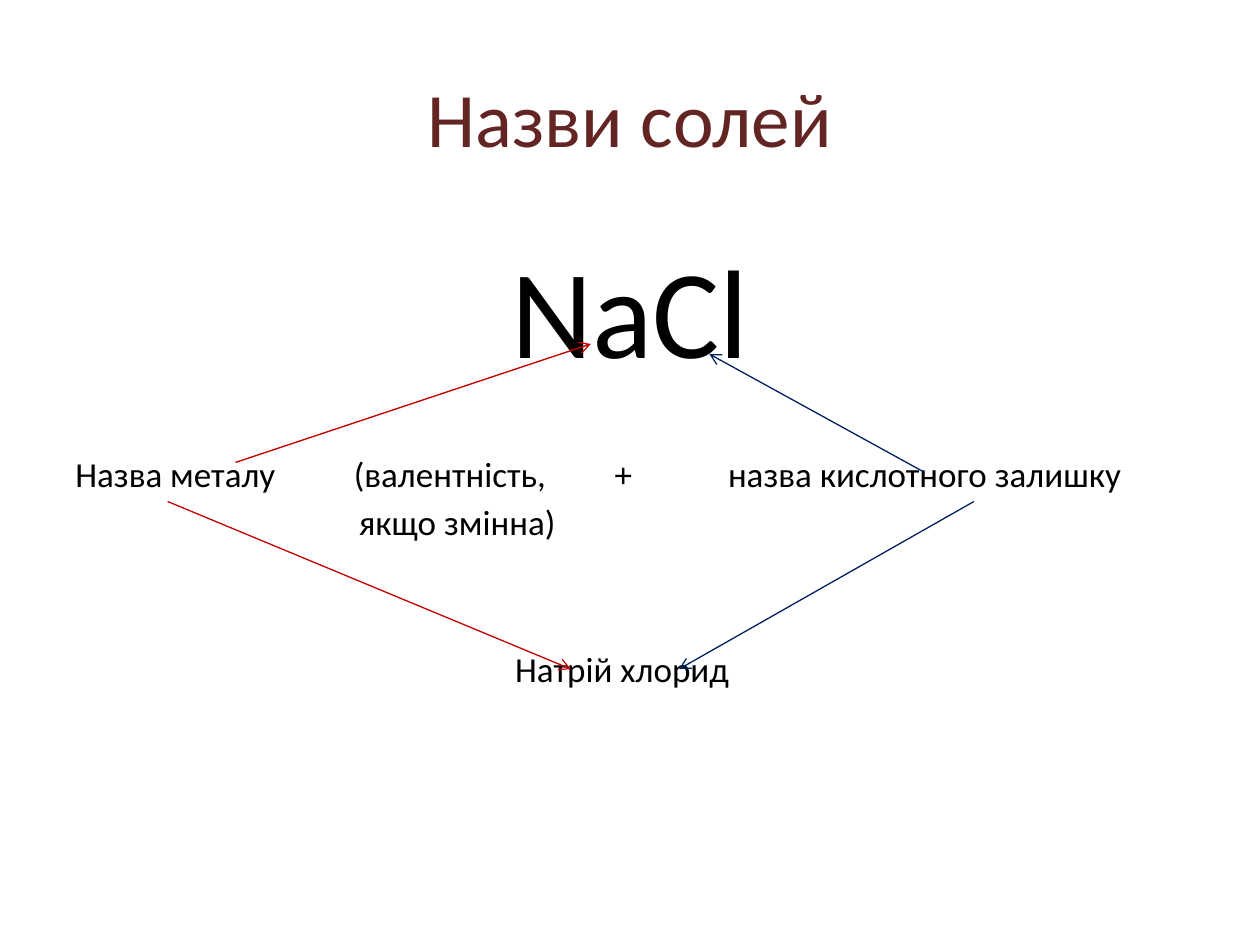
from dataclasses import dataclass

from pptx import Presentation
from pptx.dml.color import RGBColor
from pptx.enum.shapes import MSO_CONNECTOR
from pptx.enum.text import MSO_ANCHOR, PP_ALIGN
from pptx.oxml.ns import qn
from pptx.util import Inches, Pt
from lxml.etree import SubElement


@dataclass(frozen=True)
class Theme:
    font: str = "Calibri"
    title_color: str = "632523"
    text_color: str = "000000"
    metal_color: str = "C00000"
    residue_color: str = "002060"
    title_size: float = 44
    formula_size: float = 72
    text_size: float = 20
    line_width: float = 0.75
    line_gap: float = 3.6


class SaltSlide:
    def __init__(self, slide, theme):
        self.slide = slide
        self.theme = theme

    def format_runs(self, paragraph, size, color):
        for run in paragraph.runs:
            run.font.name = self.theme.font
            run.font.size = Pt(size)
            run.font.color.rgb = RGBColor.from_string(color)

    def title(self, wording, left, top, width, height):
        heading = self.slide.shapes.title
        heading.left, heading.top = Inches(left), Inches(top)
        heading.width, heading.height = Inches(width), Inches(height)
        frame = heading.text_frame
        frame.text = wording
        frame.vertical_anchor = MSO_ANCHOR.MIDDLE
        frame.paragraphs[0].alignment = PP_ALIGN.CENTER
        self.format_runs(frame.paragraphs[0], self.theme.title_size, self.theme.title_color)

    def body(self, left, top, width, height):
        box = self.slide.shapes.add_textbox(
            Inches(left), Inches(top), Inches(width), Inches(height)
        )
        box.text_frame.word_wrap = True
        return box.text_frame

    def formula(self, frame, wording):
        paragraph = frame.paragraphs[0]
        paragraph.text = wording
        paragraph.alignment = PP_ALIGN.CENTER
        self.format_runs(paragraph, self.theme.formula_size, self.theme.text_color)

    def tabbed_line(self, frame, wording, stops, space_before):
        paragraph = frame.add_paragraph()
        paragraph.text = wording
        tabs = SubElement(paragraph._p.get_or_add_pPr(), qn("a:tabLst"))
        for stop in stops:
            SubElement(tabs, qn("a:tab"), pos=str(Inches(stop)), algn="l")
        paragraph.alignment = PP_ALIGN.LEFT
        paragraph.space_before = Pt(space_before)
        self.format_runs(paragraph, self.theme.text_size, self.theme.text_color)

    def arrow(self, start, end, color):
        connector = self.slide.shapes.add_connector(
            MSO_CONNECTOR.STRAIGHT, *(Inches(value) for value in (*start, *end))
        )
        connector.line.color.rgb = RGBColor.from_string(color)
        connector.line.width = Pt(self.theme.line_width)
        SubElement(connector.line._get_or_add_ln(), qn("a:tailEnd"), type="arrow")
        SubElement(connector._element.spPr, qn("a:effectLst"))


def main():
    presentation = Presentation()
    presentation.slide_width = Inches(10)
    presentation.slide_height = Inches(7.5)
    theme = Theme()
    salts = SaltSlide(presentation.slides.add_slide(presentation.slide_layouts[5]), theme)

    salts.title("Назви солей", 0.5, 0.3, 9, 1.25)

    naming = salts.body(0.5, 1.8, 9, 4.9)
    salts.formula(naming, "NaCl")
    naming_lines = [
        ("Назва металу\t(валентність,\t+\tназва кислотного залишку", (2.21, 4.28, 5.18), 39),
        ("\tякщо змінна)", (2.25,), theme.line_gap),
        ("\tНатрій хлорид", (3.49,), 60),
    ]
    for wording, stops, space_before in naming_lines:
        salts.tabbed_line(naming, wording, stops, space_before)

    arrows = [
        ((1.87, 3.67), (4.69, 2.73), theme.metal_color),
        ((7.73, 3.98), (5.39, 5.31), theme.residue_color),
        ((1.33, 3.98), (4.53, 5.31), theme.metal_color),
        ((7.34, 3.75), (5.63, 2.81), theme.residue_color),
    ]
    for start, end, color in arrows:
        salts.arrow(start, end, color)

    presentation.save("out.pptx")


if __name__ == "__main__":
    main()
